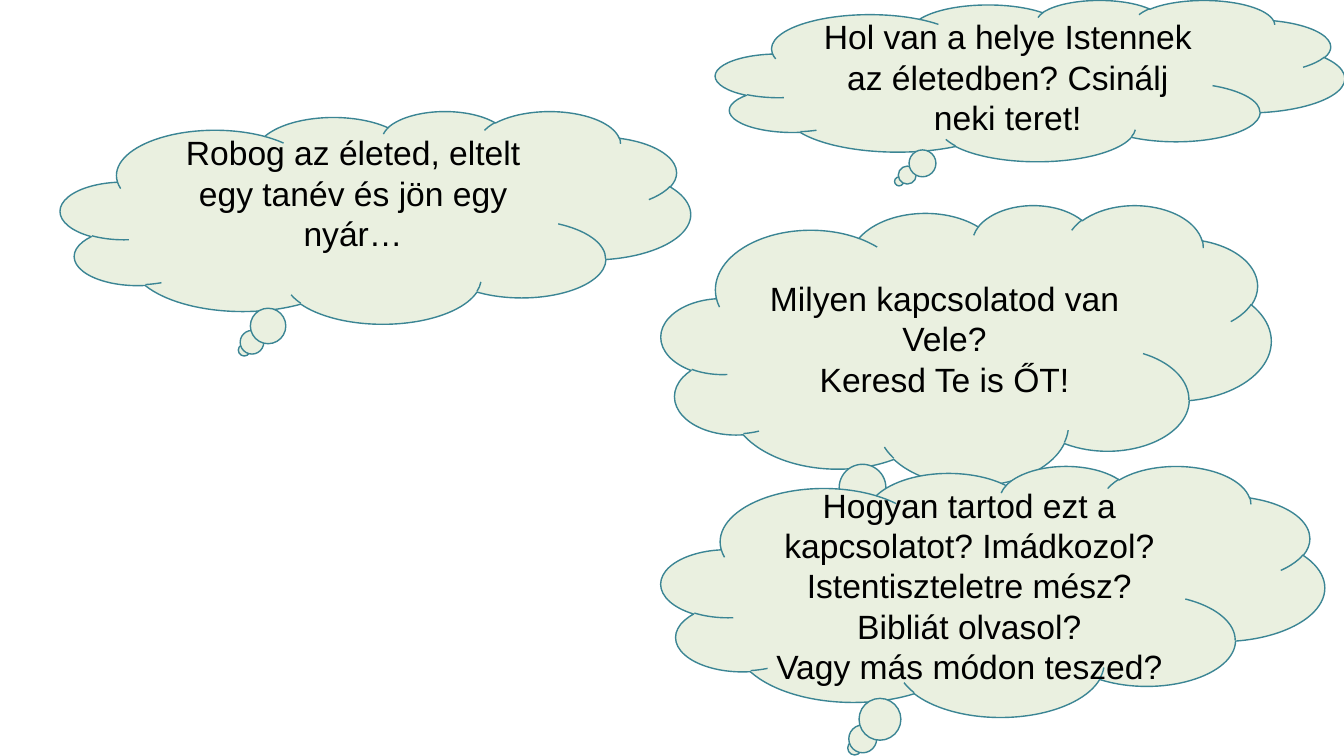
from pptx import Presentation
from pptx.dml.color import RGBColor
from pptx.enum.shapes import MSO_SHAPE as Shape
from pptx.enum.text import MSO_ANCHOR as Anchor, PP_ALIGN as Align
from pptx.util import Pt


def color(hex_code):
    return RGBColor.from_string(hex_code)


class ThoughtSlide:
    """Holds the style and the current slide."""

    FONT, SIZE = "Arial", 24
    INK, FILL, LINE = "000000", "EAF0E0", "3B8594"
    INSET = 3.6

    def __init__(self, deck):
        self.slide = deck.slides.add_slide(deck.slide_layouts[6])

    def cloud(self, left, top, width, height, paragraphs, lift=0):
        """Thought cloud with centred text; lift is extra room below the text."""
        cloud = self.slide.shapes.add_shape(
            Shape.CLOUD_CALLOUT, Pt(left), Pt(top), Pt(width), Pt(height))
        cloud.shadow.inherit = False
        cloud.fill.solid()
        cloud.fill.fore_color.rgb = color(self.FILL)
        cloud.line.color.rgb = color(self.LINE)
        cloud.line.width = Pt(1)

        frame = cloud.text_frame
        frame.word_wrap = True
        frame.vertical_anchor = Anchor.MIDDLE
        frame.margin_bottom = Pt(self.INSET + lift)
        frame.text = "\n".join(paragraphs)
        for paragraph in frame.paragraphs:
            paragraph.alignment = Align.CENTER
            paragraph.font.name = self.FONT
            paragraph.font.size = Pt(self.SIZE)
            paragraph.font.color.rgb = color(self.INK)


def main():
    deck = Presentation()
    deck.slide_width, deck.slide_height = Pt(960), Pt(540)
    thoughts = ThoughtSlide(deck)

    # Opening thought on the left
    thoughts.cloud(43.2, 79.2, 450, 151.9,
                   ["Robog az életed, eltelt egy tanév és jön egy nyár…"], lift=28)

    # Questions down the right side
    thoughts.cloud(511.2, 0, 449.3, 115.2,
                   ["Hol van a helye Istennek az életedben? Csinálj neki teret!"])
    thoughts.cloud(472.3, 146.2, 435.6, 200.2,
                   ["Milyen kapcsolatod van Vele?", "Keresd Te is ŐT!"])
    thoughts.cloud(472.3, 332.6, 473.8, 179.3,
                   ["Hogyan tartod ezt a kapcsolatot? Imádkozol? "
                    "Istentiszteletre mész? Bibliát olvasol?",
                    "Vagy más módon teszed?"])

    deck.save("out.pptx")


if __name__ == "__main__":
    main()
